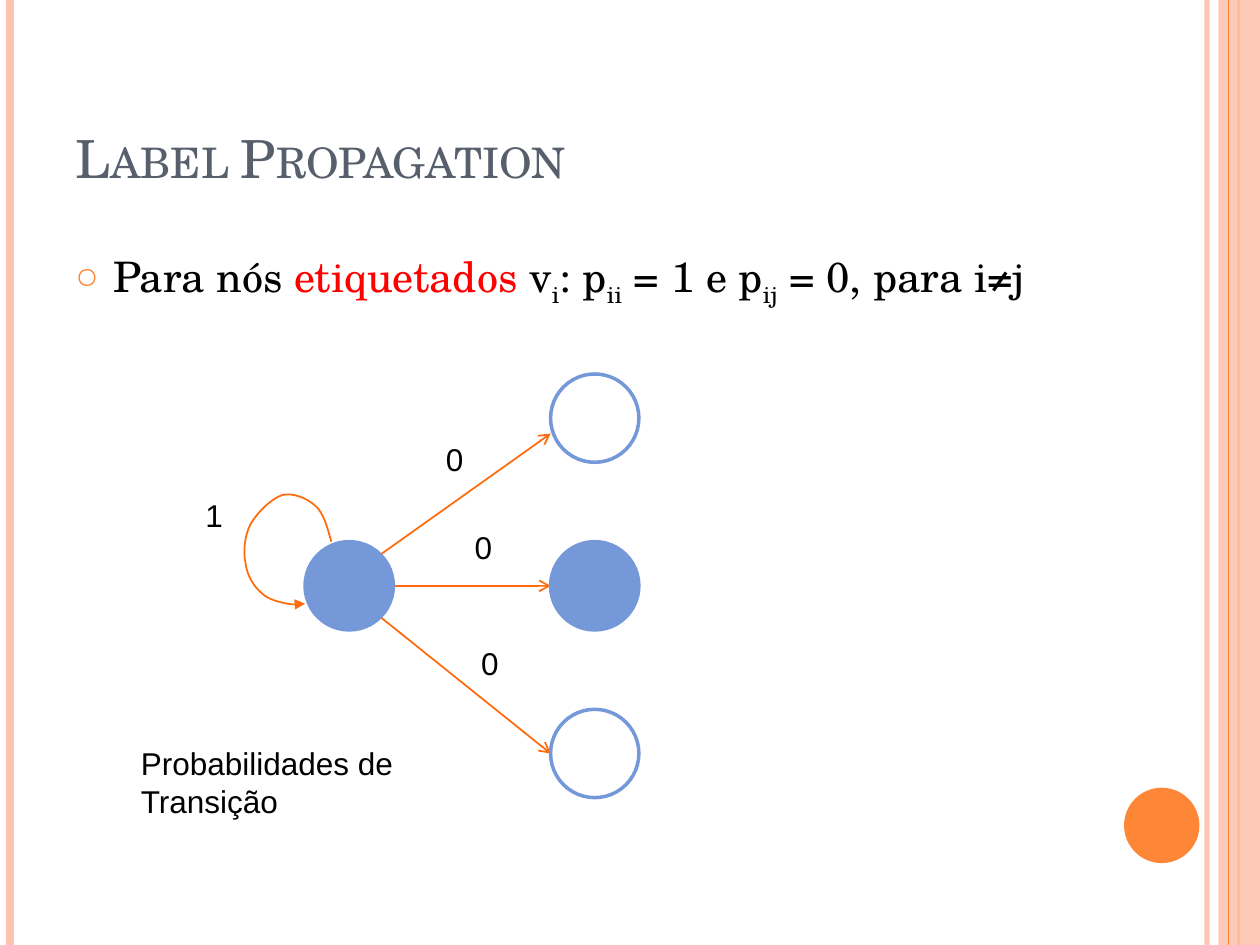
from lxml import etree
from pptx import Presentation
from pptx import util as u
from pptx.dml import color
from pptx.enum import shapes, text
from pptx.oxml import ns


def rgb(value):
    return color.RGBColor.from_string(value)


def add_xml(parent, tag, **attributes):
    return etree.SubElement(parent, ns.qn(tag), attributes)


def set_opacity(element, percent):
    """Make every colour in the element partly transparent."""
    for colour in element.iter(ns.qn("a:srgbClr")):
        add_xml(colour, "a:alpha", val=str(percent * 1000))


class SlideWriter:
    """Holds the style and the current slide; lengths are centimetres."""

    serif, sans = "TeX Gyre Schola", "Arial"
    orange, peach, arrow_colour = "FE8637", "FEC3AE", "FF6B0A"
    blue, slate, black, red = "7598D9", "575F6D", "000000", "FF0000"

    def __init__(self, slide):
        self.slide = slide

    def stroke(self, shape, colour, width, head=None):
        shape.line.color.rgb = rgb(colour)
        shape.line.width = u.Pt(width)
        if head:
            add_xml(shape.line._get_or_add_ln(), "a:tailEnd", type=head)

    def line(self, start, end, colour, width, head=None, opacity=100):
        connector = self.slide.shapes.add_connector(
            shapes.MSO_CONNECTOR.STRAIGHT, *map(u.Cm, (*start, *end)))
        self.stroke(connector, colour, width, head)
        properties = connector._element.spPr
        if opacity < 100:
            set_opacity(properties, opacity)
        add_xml(properties, "a:effectLst")

    def shape(self, kind, box, fill=None, outline=None, opacity=100):
        shape = self.slide.shapes.add_shape(kind, *map(u.Cm, box))
        shape.shadow.inherit = False
        if fill:
            shape.fill.solid()
            shape.fill.fore_color.rgb = rgb(fill)
        else:
            shape.fill.background()
        if opacity < 100:
            set_opacity(shape._element.spPr, opacity)
        if outline:
            self.stroke(shape, outline, 2)
        else:
            shape.line.fill.background()

    def curve(self, start, points, colour, width, head):
        """Draw Bézier segments; each takes two control points and an end."""
        builder = self.slide.shapes.build_freeform(*map(u.Cm, start))
        builder.add_line_segments(
            [(u.Cm(x), u.Cm(y)) for x, y in points], close=False)
        shape = builder.convert_to_shape()
        shape.shadow.inherit = False
        shape.fill.background()
        self.stroke(shape, colour, width, head)
        segments = list(shape._element.iter(ns.qn("a:lnTo")))
        outline = segments[0].getparent()
        for first in range(0, len(segments), 3):
            bezier = add_xml(outline, "a:cubicBezTo")
            for segment in segments[first:first + 3]:
                bezier.append(segment[0])
                outline.remove(segment)

    def text(self, box, runs, size, font, colour=None, wrap=True,
             anchor=text.MSO_ANCHOR.TOP, bullet=None):
        """Write one paragraph; a run is its words, colour and rPr attributes."""
        frame = self.slide.shapes.add_textbox(*map(u.Cm, box)).text_frame
        frame.word_wrap = wrap
        frame.vertical_anchor = anchor
        paragraph = frame.paragraphs[0]
        if bullet:
            self.bullet(paragraph, bullet)
        paragraph.font.size = u.Pt(size)
        paragraph.font.name = font
        if colour:
            paragraph.font.color.rgb = rgb(colour)
        for words, run_colour, attributes in runs:
            run = paragraph.add_run()
            run.text = words
            if run_colour:
                run.font.color.rgb = rgb(run_colour)
            for name, value in attributes.items():
                run._r.get_or_add_rPr().set(name, value)

    def bullet(self, paragraph, character):
        properties = paragraph._p.get_or_add_pPr()
        indent = u.Cm(0.76)
        properties.set("marL", str(indent))
        properties.set("indent", str(-indent))
        add_xml(add_xml(properties, "a:buClr"), "a:srgbClr", val=self.orange)
        add_xml(properties, "a:buSzPct", val="70000")
        add_xml(properties, "a:buChar", char=character)

    def label(self, left, top, words):
        self.text((left, top, 0.86, 1.02), [(words, None, {})], 18, self.sans,
                  self.black, wrap=False)


WIDTH, HEIGHT = 25.4, 19.05
NODE = 1.78
SOURCE_LEFT, TARGET_LEFT = 6.15, 11.1
FIRST_TOP, PITCH = 7.54, 3.38
LOOP_START = (6.68, 10.92)
LOOP = [
    (6.6, 10.64), (6.53, 10.34), (6.35, 10.19),
    (6.17, 10.03), (5.89, 9.93), (5.69, 9.98),
    (5.46, 10.06), (5.18, 10.34), (5.05, 10.57),
    (4.93, 10.8), (4.9, 11.13), (4.95, 11.35),
    (4.98, 11.61), (5.13, 11.84), (5.28, 11.96),
    (5.41, 12.09), (5.64, 12.14), (5.79, 12.17),
    (5.92, 12.19), (6.05, 12.19), (6.15, 12.17),
]


def draw_frame(writer):
    def rule(x, colour, width, opacity=100):
        writer.line((x, 0), (x, HEIGHT), colour, width, opacity=opacity)

    rule(24.33, writer.peach, 3, 93)
    rule(0.2, writer.peach, 4.5)
    rule(24.97, writer.orange, 1.5)
    writer.shape(shapes.MSO_SHAPE.RECTANGLE, (24.56, 0, WIDTH - 24.56, HEIGHT),
                 writer.peach, opacity=87)
    rule(24.77, writer.orange, 0.75)
    writer.shape(shapes.MSO_SHAPE.OVAL, (22.66, 15.88, 1.52, 1.52),
                 writer.orange)


def draw_text(writer):
    writer.text((1.27, 0.76, 20.75, 3.18),
                [("Label Propagation", None, {"cap": "small"})],
                30, writer.serif, writer.slate, anchor=text.MSO_ANCHOR.BOTTOM)
    black, lowered = writer.black, {"baseline": "-25000"}
    statement = [
        ("Para nós ", black, {}), ("etiquetados", writer.red, {}),
        (" v", black, {}), ("i", black, lowered),
        (": p", black, {}), ("ii", black, lowered),
        (" = 1 e p", black, {}), ("ij", black, lowered),
        (" = 0, para i≠j", black, {}),
    ]
    writer.text((1.27, 4.93, 20.75, 13.54), statement, 24, writer.serif,
                bullet="○")
    writer.text((2.59, 14.88, 6.55, 1.8),
                [("Probabilidades de Transição", None, {})],
                18, writer.sans, black)


def draw_graph(writer):
    tops = [FIRST_TOP + PITCH * row for row in range(3)]
    source_x, source_y = SOURCE_LEFT + NODE / 2, tops[1] + NODE / 2
    diagonal = NODE / 2 * 0.5 ** 0.5
    arrows = [
        (diagonal, -diagonal, 8.74),
        (NODE / 2, 0, source_y),
        (diagonal, diagonal, tops[2] + NODE / 2),
    ]
    for right, down, end_y in arrows:
        writer.line((source_x + right, source_y + down), (TARGET_LEFT, end_y),
                    writer.arrow_colour, 1, "arrow")
    nodes = [(TARGET_LEFT, tops[0], None), (TARGET_LEFT, tops[2], None),
             (TARGET_LEFT, tops[1], writer.blue),
             (SOURCE_LEFT, tops[1], writer.blue)]
    for left, top, fill in nodes:
        writer.shape(shapes.MSO_SHAPE.OVAL, (left, top, NODE, NODE),
                     fill, writer.blue)
    writer.curve(LOOP_START, LOOP, writer.arrow_colour, 1, "triangle")
    for left, top, words in [(8.74, 8.74, "0"), (9.32, 10.52, "0"),
                             (9.45, 12.85, "0"), (3.89, 9.88, "1")]:
        writer.label(left, top, words)


def main():
    presentation = Presentation()
    presentation.slide_width = u.Cm(WIDTH)
    presentation.slide_height = u.Cm(HEIGHT)
    slide = presentation.slides.add_slide(presentation.slide_layouts[6])
    writer = SlideWriter(slide)
    draw_frame(writer)
    draw_text(writer)
    draw_graph(writer)
    presentation.save("out.pptx")


if __name__ == "__main__":
    main()
